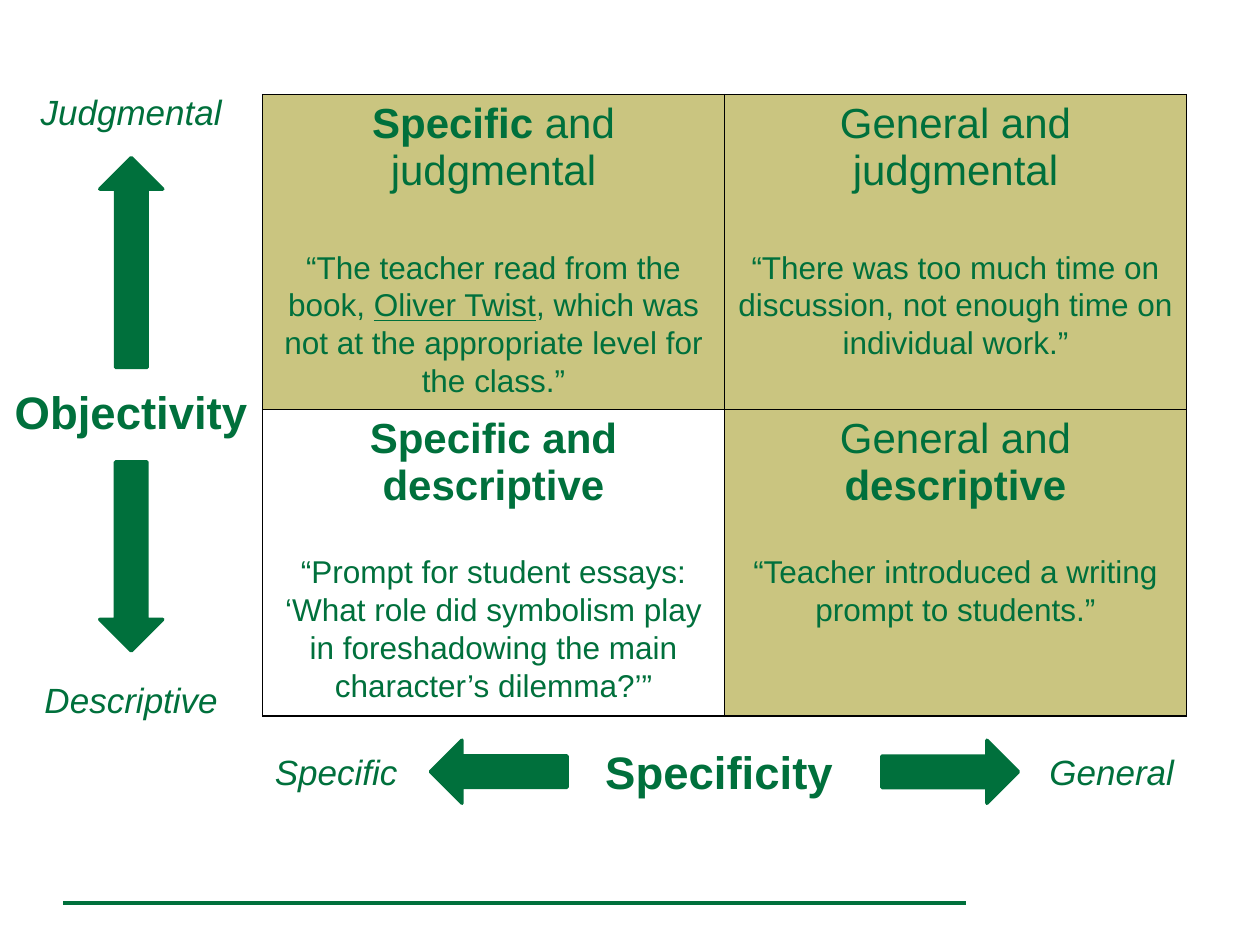
"""Builds a quadrant slide of objectivity against specificity."""
from lxml.etree import SubElement
from pptx import Presentation
from pptx.dml.color import RGBColor
from pptx.enum.shapes import MSO_CONNECTOR as CONN, MSO_SHAPE as SHAPE
from pptx.enum.text import MSO_ANCHOR as ANCHOR, MSO_AUTO_SIZE as AUTO, PP_ALIGN as ALIGN
from pptx.oxml import parse_xml
from pptx.oxml.ns import nsdecls, qn
from pptx.util import Inches, Pt

GREEN, TAN, WHITE, BLACK = "00703C", "CAC580", "FFFFFF", "000000"
LABEL = dict(size=Pt(20), italic=True)
AXIS = dict(size=Pt(26), bold=True)


def color(value):
    return RGBColor.from_string(value)


def write(tf, runs, align=ALIGN.CENTER):
    p = tf.paragraphs[0]
    p.alignment = align
    for text, fmt in runs:
        r = p.add_run()
        r.text = text
        r.font.name = "Arial"
        r.font.color.rgb = color(GREEN)
        for key, value in fmt.items():
            setattr(r.font, key, value)


prs = Presentation()
prs.slide_width, prs.slide_height = Inches(10), Inches(7.5)
U = prs.slide_width / 120
s = prs.slides.add_slide(prs.slide_layouts[6])

rule = s.shapes.add_connector(CONN.STRAIGHT, *(int(v * U) for v in (6, 86, 92, 86)))
rule.line.color.rgb = color(GREEN)
rule.line.width = Pt(2.5)
SubElement(rule._element.spPr, qn("a:effectLst"))

HEAD = dict(size=Pt(24), bold=False)
BOLD = dict(size=Pt(24), bold=True)
cells = [
    [(TAN, [("Specific ", BOLD), ("and judgmental", HEAD)]),
     (TAN, [("General and judgmental", HEAD)])],
    [(WHITE, [("Specific and descriptive", BOLD)]),
     (TAN, [("General and ", HEAD), ("descriptive", BOLD)])],
]
frame = s.shapes.add_table(2, 2, *(int(v * U) for v in (25, 9, 88, 59.2)))
table = frame.table
for i, height in enumerate((30, 29.2)):
    table.columns[i].width = int(44 * U)
    table.rows[i].height = int(height * U)
    for j, (fill, runs) in enumerate(cells[i]):
        cell = table.cell(i, j)
        write(cell.text_frame, runs)
        tcPr = cell._tc.get_or_add_tcPr()
        for side in ("lnL", "lnR", "lnT", "lnB"):
            tcPr.append(parse_xml(
                f'<a:{side} {nsdecls("a")} w="12700"><a:solidFill>'
                f'<a:srgbClr val="{BLACK}"/></a:solidFill></a:{side}>'))
        cell.fill.solid()
        cell.fill.fore_color.rgb = color(fill)

for x, y, w, h, angle in [
    (9.5, 44, 6, 18, 0), (9.5, 15, 6, 20, 180),
    (44.5, 67, 6, 13, 90), (87.5, 67, 6, 13, 270),
]:
    sp = s.shapes.add_shape(SHAPE.DOWN_ARROW, *(int(v * U) for v in (x, y, w, h)))
    sp.rotation = angle
    sp.shadow.inherit = False
    sp.fill.solid()
    sp.fill.fore_color.rgb = color(GREEN)
    sp.line.color.rgb = color(GREEN)
    sp.line.width = Pt(2)
    SubElement(sp.line._get_or_add_ln(), qn("a:round"))

for text, x, y, fmt, align, anchor in [
    ("Judgmental", 0, 8, LABEL, ALIGN.CENTER, ANCHOR.TOP),
    ("Objectivity", 0, 36, AXIS, ALIGN.CENTER, ANCHOR.TOP),
    ("Descriptive", 0, 64, LABEL, ALIGN.CENTER, ANCHOR.TOP),
    ("Specific", 25, 67, LABEL, ALIGN.LEFT, ANCHOR.MIDDLE),
    ("Specificity", 56, 67, AXIS, ALIGN.CENTER, ANCHOR.MIDDLE),
    ("General", 88, 67, LABEL, ALIGN.RIGHT, ANCHOR.MIDDLE),
]:
    tf = s.shapes.add_textbox(*(int(v * U) for v in (x, y, 25, 13))).text_frame
    tf.word_wrap = True
    tf.vertical_anchor = anchor
    write(tf, [(text, fmt)], align)

BODY = dict(size=Pt(18))
for x, y, lines, runs in [
    (25, 23, 4, [("“The teacher read from the book, ", BODY),
                 ("Oliver Twist", dict(BODY, underline=True)),
                 (", which was not at the appropriate level for the class.”", BODY)]),
    (69, 23, 3, [("“There was too much time on discussion, not enough time on "
                  "individual work.”", BODY)]),
    (69, 52, 2, [("“Teacher introduced a writing prompt to students.”", BODY)]),
    (25, 52, 4, [("“Prompt for student essays: ‘What role did symbolism play in "
                  "foreshadowing the main character’s dilemma?’”", BODY)]),
]:
    height = 1.2 + 3.63 * lines
    tf = s.shapes.add_textbox(*(int(v * U) for v in (x, y, 44, height))).text_frame
    tf.word_wrap = True
    tf.auto_size = AUTO.SHAPE_TO_FIT_TEXT
    write(tf, runs)

prs.save("out.pptx")
